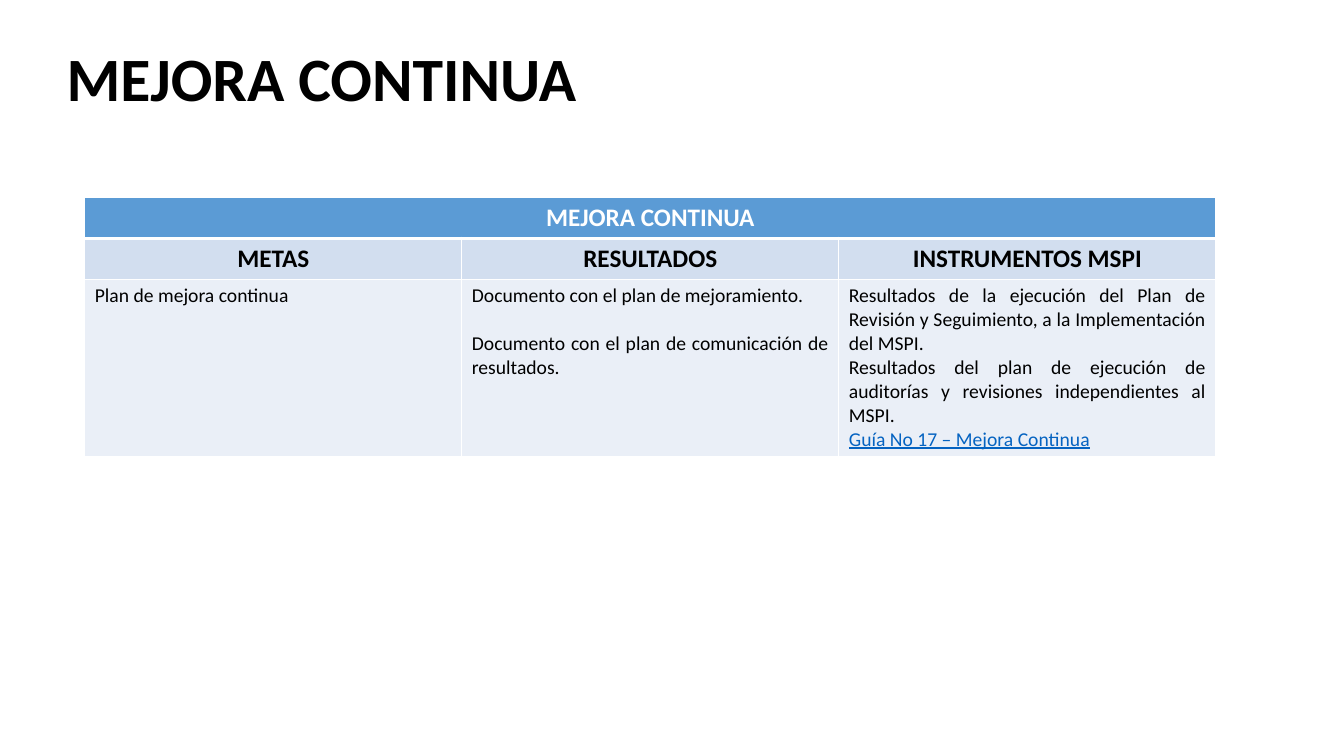
from lxml import etree
from pptx import Presentation
from pptx.dml.color import RGBColor
from pptx.enum import text as t
from pptx.oxml import ns
from pptx.util import Inches, Pt

WHITE = RGBColor(0xFF, 0xFF, 0xFF)
BLACK = RGBColor(0, 0, 0)
BLUE = RGBColor(0x5B, 0x9B, 0xD5)
PALE = RGBColor(0xD2, 0xDE, 0xEF)
PALEST = RGBColor(0xEA, 0xEF, 0xF7)
LINK = RGBColor(0x05, 0x63, 0xC1)
FONT = "Calibri"

TITLE = "MEJORA CONTINUA"
GUIDE = "Guía No 17 – Mejora Continua"
ROWS = [
    [[TITLE], [], []],
    [["METAS"], ["RESULTADOS"], ["INSTRUMENTOS MSPI"]],
    [
        ["Plan de mejora continua"],
        ["Documento con el plan de mejoramiento.",
         "Documento con el plan de comunicación de resultados."],
        ["Resultados de la ejecución del Plan de Revisión y Seguimiento, "
         "a la Implementación del MSPI.",
         "Resultados del plan de ejecución de auditorías y revisiones "
         "independientes al MSPI.",
         GUIDE],
    ],
]
LEFT, CENTER, JUSTIFY = t.PP_ALIGN.LEFT, t.PP_ALIGN.CENTER, t.PP_ALIGN.JUSTIFY
STYLES = [
    (0.36, BLUE, WHITE, 18, True, [CENTER] * 3),
    (0.36, PALE, BLACK, 18, True, [CENTER] * 3),
    (1.56, PALEST, BLACK, 14, False, [LEFT, JUSTIFY, JUSTIFY]),
]
COLUMN_WIDTH = 3.74
PARAGRAPH_GAPS = {(2, 1): 17}


def set_font(p, size, color, bold):
    p.font.name = FONT
    p.font.size = Pt(size)
    p.font.bold = bold
    p.font.color.rgb = color


def add_borders(cell, widths):
    tcPr = cell._tc.get_or_add_tcPr()
    for side, width in widths.items():
        line = etree.SubElement(tcPr, ns.qn(f"a:ln{side}"), w=str(Pt(width)))
        fill = etree.SubElement(line, ns.qn("a:solidFill"))
        etree.SubElement(fill, ns.qn("a:srgbClr"), val=str(WHITE))


prs = Presentation()
prs.slide_width, prs.slide_height = Inches(13.33), Inches(7.5)
s = prs.slides.add_slide(prs.slide_layouts[5])

title = s.shapes.title
title.left, title.top = Inches(0.56), Inches(0.43)
title.width, title.height = Inches(11.5), Inches(1.45)
tf = title.text_frame
tf.text = TITLE
tf.auto_size = t.MSO_AUTO_SIZE.NONE
tf.vertical_anchor = t.MSO_ANCHOR.TOP
p = tf.paragraphs[0]
p.alignment = LEFT
p.line_spacing = 0.9
set_font(p, 44, BLACK, True)

table = s.shapes.add_table(
    len(ROWS), 3, Inches(0.84), Inches(1.96), Inches(3 * COLUMN_WIDTH),
    Inches(sum(style[0] for style in STYLES))).table
for column in table.columns:
    column.width = Inches(COLUMN_WIDTH)
table.cell(0, 0).merge(table.cell(0, 2))

for i, (row, style) in enumerate(zip(ROWS, STYLES)):
    height, fill, color, size, bold, alignments = style
    table.rows[i].height = Inches(height)
    for j, lines in enumerate(row):
        cell = table.cell(i, j)
        add_borders(cell, {"L": 1, "R": 1, "T": 3 if i == 1 else 1,
                           "B": 3 if i == 0 else 1})
        cell.fill.solid()
        cell.fill.fore_color.rgb = fill
        tf = cell.text_frame
        for k, line in enumerate(lines):
            p = tf.add_paragraph() if k else tf.paragraphs[0]
            p.text = line
            p.alignment = alignments[j]
            if k and (i, j) in PARAGRAPH_GAPS:
                p.space_before = Pt(PARAGRAPH_GAPS[i, j])
            set_font(p, size, LINK if line == GUIDE else color, bold)
            if line == GUIDE:
                p.font.underline = True

prs.save("out.pptx")
